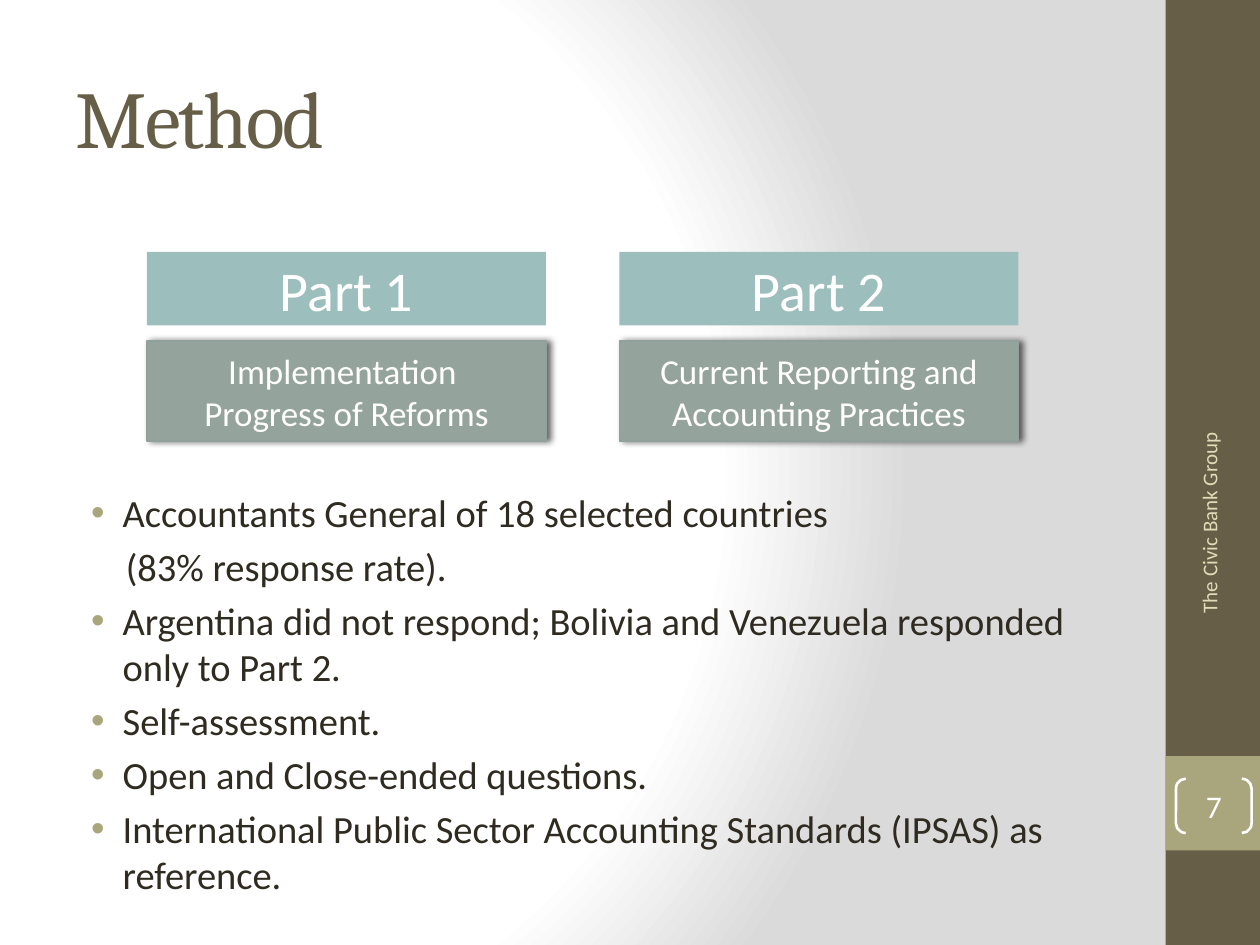
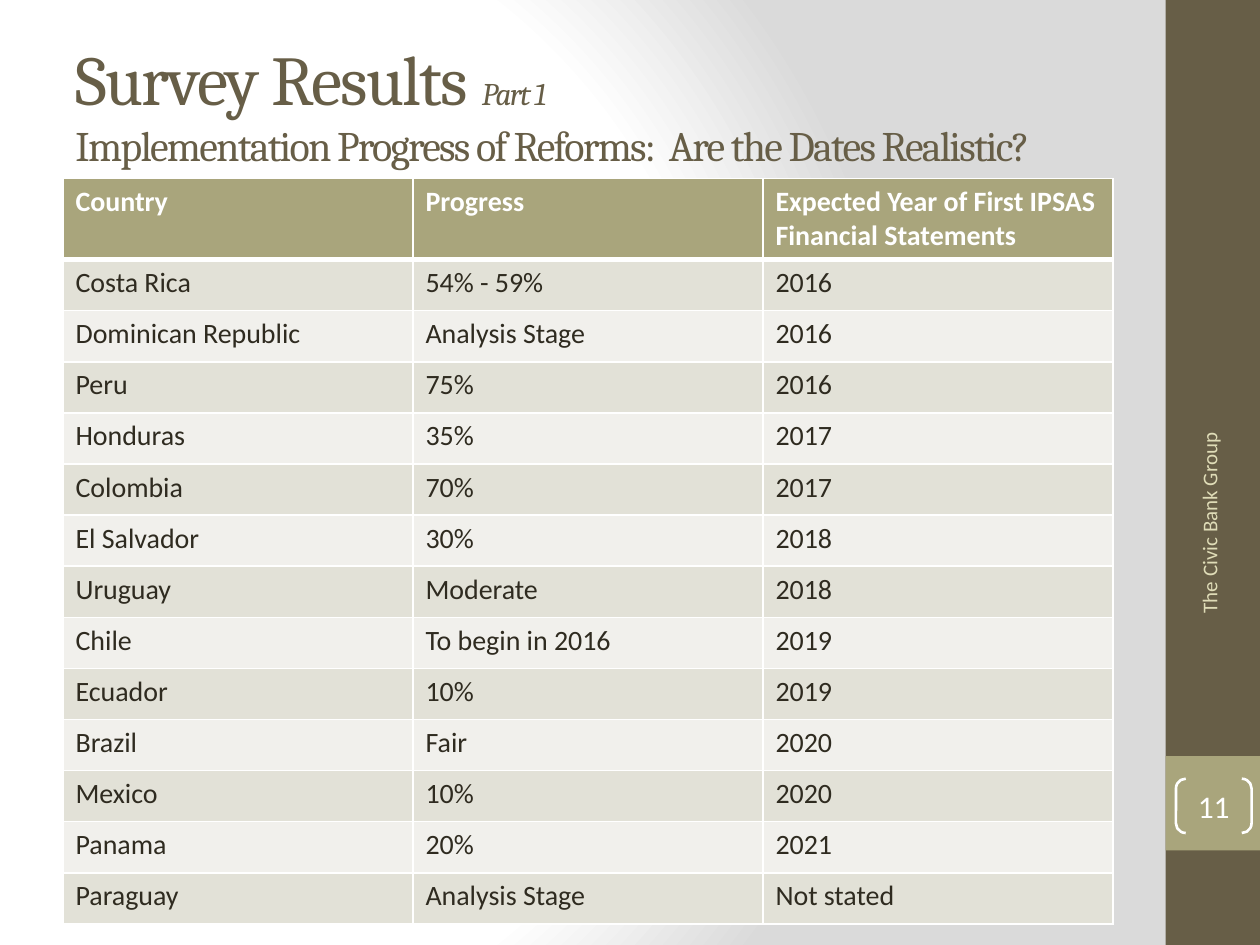
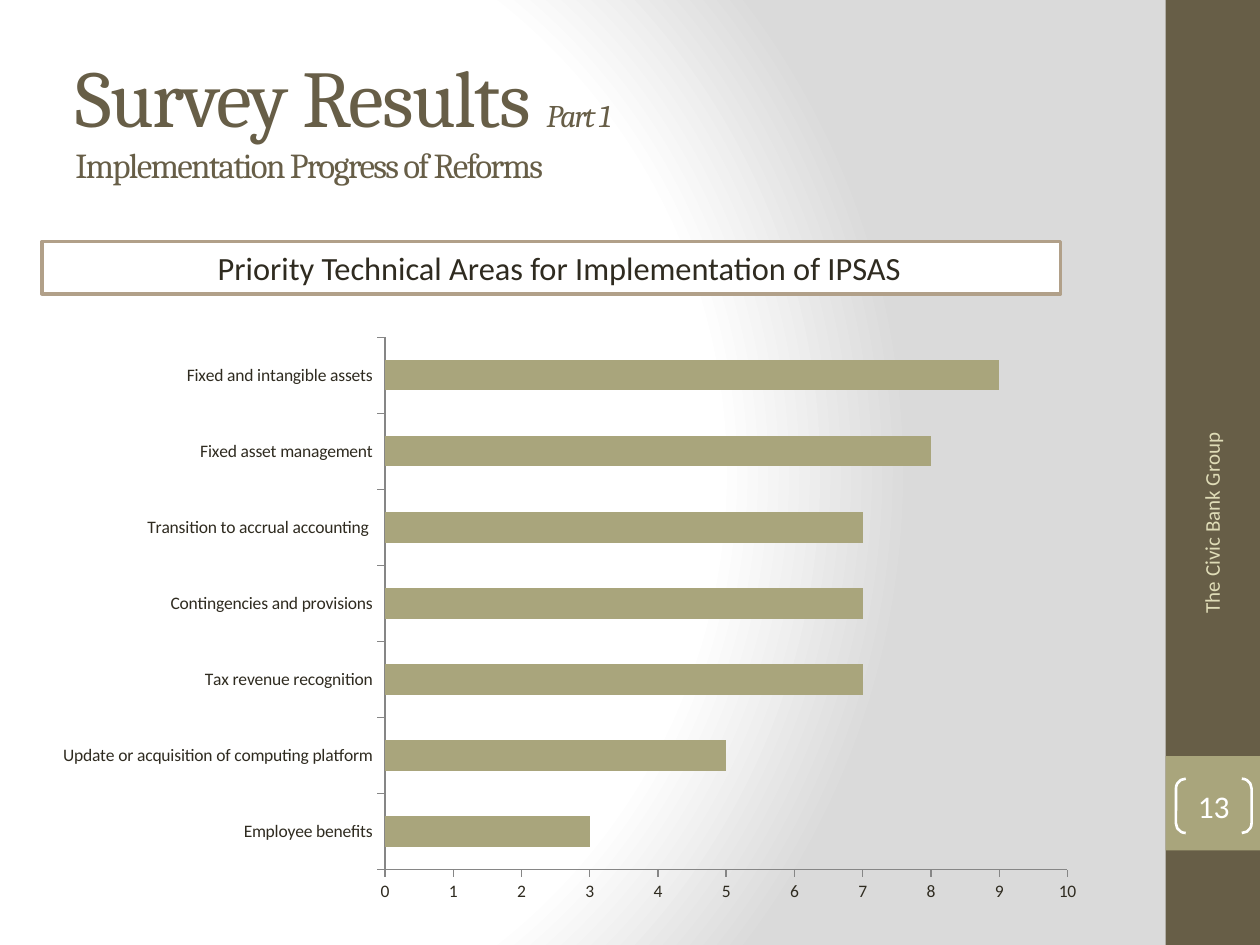
"""Build three survey slides with a shared side band, titles and footers."""
from dataclasses import dataclass

from lxml import etree
from pptx import Presentation
from pptx.chart.data import CategoryChartData
from pptx.dml.color import RGBColor
from pptx.enum.chart import XL_CHART_TYPE, XL_TICK_MARK
from pptx.enum.shapes import MSO_SHAPE
from pptx.enum.text import MSO_ANCHOR, PP_ALIGN
from pptx.oxml import parse_xml
from pptx.oxml.ns import nsdecls, qn
from pptx.util import Pt

RECT, BRACKETS = MSO_SHAPE.RECTANGLE, MSO_SHAPE.DOUBLE_BRACKET
TOP, MIDDLE = MSO_ANCHOR.TOP, MSO_ANCHOR.MIDDLE
LEFT, CENTER, RIGHT = PP_ALIGN.LEFT, PP_ALIGN.CENTER, PP_ALIGN.RIGHT
BAR_STACKED = XL_CHART_TYPE.BAR_STACKED
TICK_OUT = XL_TICK_MARK.OUTSIDE


@dataclass(frozen=True)
class Theme:
    """Colours, fonts and type sizes of the deck."""
    heading: str = "Cambria"
    text: str = "Calibri"
    ink: str = "2F2B20"
    white: str = "FFFFFF"
    shade: str = "DADADA"
    brown: str = "675E47"
    olive: str = "A9A57C"
    cream: str = "DFDCB7"
    teal: str = "9CBEBD"
    sage: str = "95A39D"
    sage_line: str = "91A09A"
    tan: str = "B1A089"
    axis: str = "868686"
    rows: tuple = ("E2E1D7", "F1F0EC")
    title_size: float = 46
    small_title_size: float = 40
    part_size: float = 18
    body_size: float = 22
    head_size: float = 32
    box_size: float = 20
    banner_size: float = 18.5
    table_size: float = 16
    footer_size: float = 12
    number_size: float = 18
    chart_size: float = 10


def rgb(color):
    """Turn a hex string into a colour."""
    return RGBColor.from_string(color)


class Deck:
    """Hold the presentation, its theme and the current slide."""

    def __init__(self, theme):
        """Start a 10 by 7.5 inch deck with the shared background."""
        self.t = theme
        self.prs = Presentation()
        self.prs.slide_width, self.prs.slide_height = Pt(720), Pt(540)
        master = self.prs.slide_master
        master.background.fill.gradient()
        grad = master.element.find(".//" + qn("p:bg") + "//" + qn("a:gradFill"))
        stops = "".join(
            f'<a:gs pos="{pos * 1000}"><a:srgbClr val="{color}"/></a:gs>'
            for pos, color in ((0, theme.white), (75, theme.white), (100, theme.shade)))
        grad.getparent().replace(grad, parse_xml(
            f'<a:gradFill {nsdecls("a")} rotWithShape="1"><a:gsLst>{stops}</a:gsLst>'
            '<a:path path="circle"><a:fillToRect l="20000" t="50000" r="100000" b="50000"/>'
            '</a:path></a:gradFill>'))

    def slide(self, number, footer_left=597.6):
        """Add a slide with its side band, footer and page number."""
        t = self.t
        self.s = self.prs.slides.add_slide(self.prs.slide_layouts[6])
        self.box((666, 0, 54, 540), t.brown)
        self.box((666, 432, 54, 54), t.olive)
        footer = self.textbox((footer_left, 319, 186.5, 28.8), MIDDLE)
        footer.rotation = 270
        self.run(self.para(footer.text_frame, RIGHT), "The Civic Bank Group",
                 t.footer_size, t.cream)
        sp = self.box((672, 445, 43.2, 31), line=t.white, width=1.5, kind=BRACKETS)
        sp.adjustments[0] = 0.18
        tf = sp.text_frame
        tf.margin_left = tf.margin_right = tf.margin_top = tf.margin_bottom = 0
        self.run(self.para(tf, CENTER), str(number), t.number_size, t.white)

    def box(self, at, fill=None, line=None, width=1, kind=RECT):
        """Add a preset shape without shadow, ready for centred text."""
        sp = self.s.shapes.add_shape(kind, *map(Pt, at))
        sp.shadow.inherit = False
        if fill:
            sp.fill.solid()
            sp.fill.fore_color.rgb = rgb(fill)
        else:
            sp.fill.background()
        if line:
            sp.line.color.rgb = rgb(line)
            sp.line.width = Pt(width)
        else:
            sp.line.fill.background()
        sp.text_frame.word_wrap = True
        sp.text_frame.vertical_anchor = MIDDLE
        return sp

    def textbox(self, at, anchor=TOP):
        """Add a wrapping text box."""
        sp = self.s.shapes.add_textbox(*map(Pt, at))
        sp.text_frame.word_wrap = True
        sp.text_frame.vertical_anchor = anchor
        return sp

    def para(self, tf, align=LEFT, first=True):
        """Return the first paragraph, or a new one."""
        p = tf.paragraphs[0] if first else tf.add_paragraph()
        p.alignment = align
        return p

    def run(self, p, text, size, color, font=None, bold=False, italic=False):
        """Add one styled run."""
        r = p.add_run()
        r.text = text
        r.font.name, r.font.size = font or self.t.text, Pt(size)
        r.font.color.rgb = rgb(color)
        r.font.bold, r.font.italic = bold, italic
        return r

    def indent(self, p, left, hanging=0, bullet=None):
        """Set a paragraph's indents and its bullet."""
        pPr = p._p.get_or_add_pPr()
        pPr.set("marL", str(Pt(left)))
        pPr.set("indent", str(-Pt(hanging)))
        if bullet:
            color = etree.SubElement(pPr, qn("a:buClr"))
            etree.SubElement(color, qn("a:srgbClr"), val=self.t.olive)
            etree.SubElement(pPr, qn("a:buFont"), typeface="Arial")
            etree.SubElement(pPr, qn("a:buChar"), char=bullet)

    def title(self, text, size, top=21.6, height=90, part=None, subtitle=None, sub_size=0):
        """Add a title, with an optional part label and subtitle line."""
        p = self.para(self.textbox((36, top, 600, height), MIDDLE).text_frame)
        parts = [(text, size, False)]
        if part:
            parts += [(part, self.t.part_size, True), (subtitle, sub_size, False)]
        for words, pts, italic in parts:
            if words == subtitle:
                p.add_line_break()
            r = self.run(p, words, pts, self.t.brown, self.t.heading, italic=italic)
            r.font._element.set("spc", "-100")

    def bullets(self, at, items):
        """Add body paragraphs given as (text, bulleted)."""
        tf = self.textbox(at).text_frame
        for i, (text, bulleted) in enumerate(items):
            p = self.para(tf, first=i == 0)
            p.space_before = Pt(4.4)
            if bulleted:
                self.indent(p, 27, 18, "•")
            else:
                self.indent(p, 28.8)
            self.run(p, text, self.t.body_size, self.t.ink)

    def part_card(self, left, heading, lines):
        """Add a heading box above a shadowed description box."""
        t = self.t
        head = self.box((left, 144, 228, 42), t.teal)
        self.run(self.para(head.text_frame, CENTER), heading, t.head_size, t.white)
        sp = self.box((left, 195, 228, 57), t.sage, t.sage_line)
        effects = sp._element.spPr.find(qn("a:effectLst"))
        effects.append(parse_xml(
            f'<a:outerShdw {nsdecls("a")} blurRad="{Pt(4)}" dist="{Pt(2)}" dir="0">'
            '<a:srgbClr val="000000"><a:alpha val="60000"/></a:srgbClr></a:outerShdw>'))
        p = self.para(sp.text_frame, CENTER)
        for i, text in enumerate(lines):
            if i:
                p.add_line_break()
            self.run(p, text, t.box_size, t.white)

    def banner(self, at, text):
        """Add a framed heading line."""
        sp = self.box(at, self.t.white, self.t.tan, 2)
        p = self.para(sp.text_frame, CENTER)
        self.indent(p, 9)
        self.run(p, text, self.t.banner_size, self.t.ink)

    def borders(self, cell, top=1, bottom=1):
        """Draw white borders around a cell."""
        tcPr = cell._tc.get_or_add_tcPr()
        for side, width in (("L", 1), ("R", 1), ("T", top), ("B", bottom)):
            tcPr.append(parse_xml(
                f'<a:ln{side} {nsdecls("a")} w="{Pt(width)}"><a:solidFill>'
                f'<a:srgbClr val="{self.t.white}"/></a:solidFill></a:ln{side}>'))

    def table(self, left, top, col_width, head_height, row_height, rows):
        """Add a table with a header row and alternating fills."""
        t, cols = self.t, len(rows[0])
        height = head_height + row_height * (len(rows) - 1)
        table = self.s.shapes.add_table(
            len(rows), cols, Pt(left), Pt(top), Pt(col_width * cols), Pt(height)).table
        for i, row in enumerate(rows):
            head = i == 0
            table.rows[i].height = Pt(head_height if head else row_height)
            for j, text in enumerate(row):
                cell = table.cell(i, j)
                self.borders(cell, 3 if i == 1 else 1, 3 if head else 1)
                cell.fill.solid()
                cell.fill.fore_color.rgb = rgb(t.olive if head else t.rows[(i - 1) % 2])
                self.run(self.para(cell.text_frame), text, t.table_size,
                         t.white if head else t.ink, bold=head)

    def bar_chart(self, at, name, values):
        """Add a horizontal bar chart of a category to value mapping."""
        t = self.t
        data = CategoryChartData()
        data.categories = list(values)
        data.add_series(name, list(values.values()))
        chart = self.s.shapes.add_chart(BAR_STACKED, *map(Pt, at), data).chart
        chart.has_legend = chart.has_title = False
        chart.font.name, chart.font.size = t.text, Pt(t.chart_size)
        chart.font.color.rgb = rgb(t.ink)
        plot = chart.plots[0]
        plot.gap_width, plot.overlap, plot.vary_by_categories = 150, 100, False
        fill = plot.series[0].format.fill
        fill.solid()
        fill.fore_color.rgb = rgb(t.olive)
        for axis in (chart.category_axis, chart.value_axis):
            axis.has_major_gridlines = False
            axis.major_tick_mark = TICK_OUT
            axis.format.line.color.rgb = rgb(t.axis)
        axis = chart.value_axis
        axis.minimum_scale, axis.maximum_scale, axis.major_unit = 0, 10, 1


def method(d):
    """Build the method slide."""
    d.slide(7)
    d.title("Method", d.t.title_size)
    d.bullets((36, 276, 600, 252), [
        ("Accountants General of 18 selected countries", True),
        ("(83% response rate).", False),
        ("Argentina did not respond; Bolivia and Venezuela responded only to Part 2.", True),
        ("Self-assessment.", True),
        ("Open and Close-ended questions.", True),
        ("International Public Sector Accounting Standards (IPSAS) as reference.", True)])
    cards = [("Part 1", ["Implementation ", "Progress of Reforms"]),
             ("Part 2", ["Current Reporting and Accounting Practices"])]
    for i, (heading, lines) in enumerate(cards):
        d.part_card(84 + 270 * i, heading, lines)


def expected_years(d):
    """Build the slide of expected years by country."""
    d.slide(11)
    d.title("Survey Results ", d.t.small_title_size, 6, 105.6, "Part 1 ",
            "Implementation Progress of Reforms:  Are the Dates Realistic?", 24)
    d.table(36, 102, 200, 46.4, 29.2, [
        ("Country", "Progress", "Expected Year of First IPSAS Financial Statements"),
        ("Costa Rica", "54% - 59%", "2016"),
        ("Dominican Republic", "Analysis Stage", "2016"),
        ("Peru", "75%", "2016"),
        ("Honduras", "35%", "2017"),
        ("Colombia", "70%", "2017"),
        ("El Salvador", "30%", "2018"),
        ("Uruguay", "Moderate", "2018"),
        ("Chile", "To begin in 2016", "2019"),
        ("Ecuador", "10%", "2019"),
        ("Brazil", "Fair", "2020"),
        ("Mexico", "10%", "2020"),
        ("Panama", "20%", "2021"),
        ("Paraguay", "Analysis Stage", "Not stated")])


def priority_areas(d):
    """Build the slide of priority technical areas."""
    d.slide(13, footer_left=599)
    d.banner((24, 138, 582, 30), "Priority Technical Areas for Implementation of IPSAS")
    d.title("Survey Results ", d.t.title_size, part="Part 1 ",
            subtitle="Implementation Progress of Reforms", sub_size=20)
    d.bar_chart((24, 186, 603, 336), "Series 1", {
        "Employee benefits": 3,
        "Update or acquisition of computing platform": 5,
        "Tax revenue recognition": 7,
        "Contingencies and provisions": 7,
        "Transition to accrual accounting ": 7,
        "Fixed asset management": 8,
        "Fixed and intangible assets": 9})


def main():
    """Build and save the deck."""
    d = Deck(Theme())
    for build in (method, expected_years, priority_areas):
        build(d)
    d.prs.save("out.pptx")


if __name__ == "__main__":
    main()
